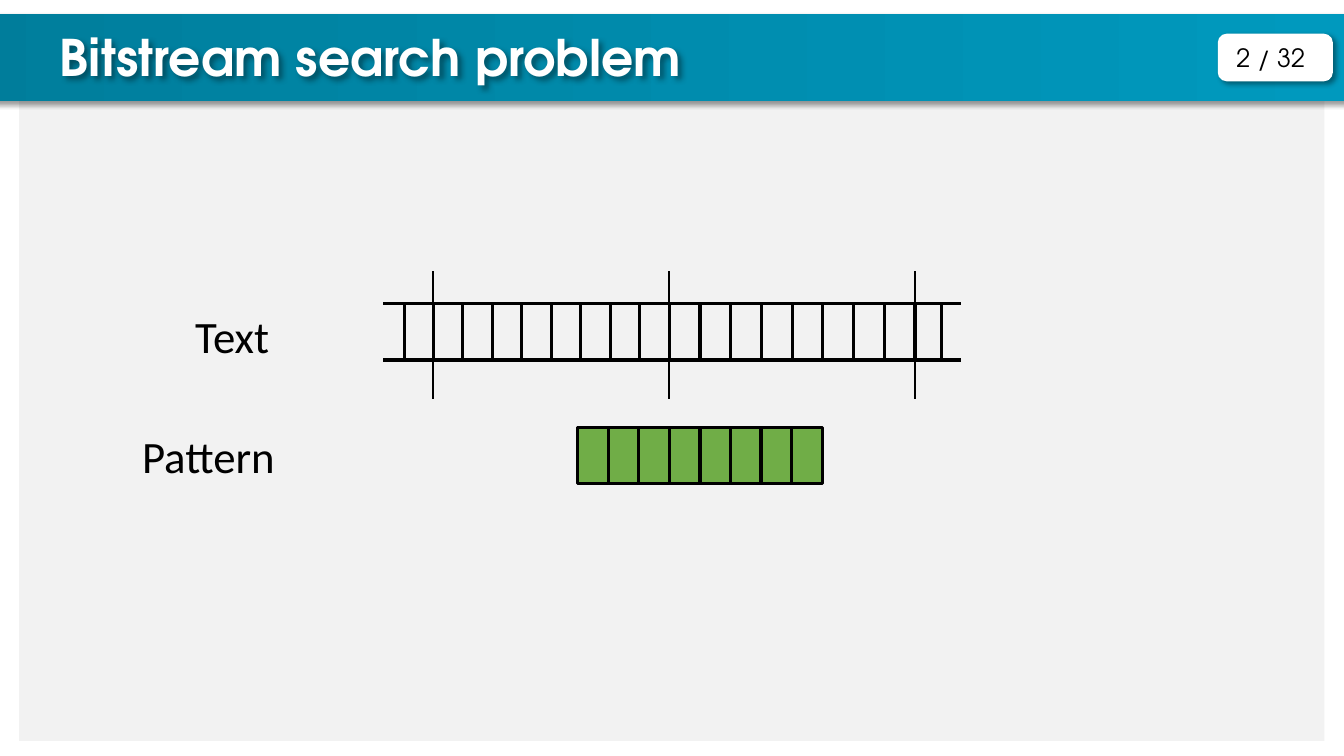
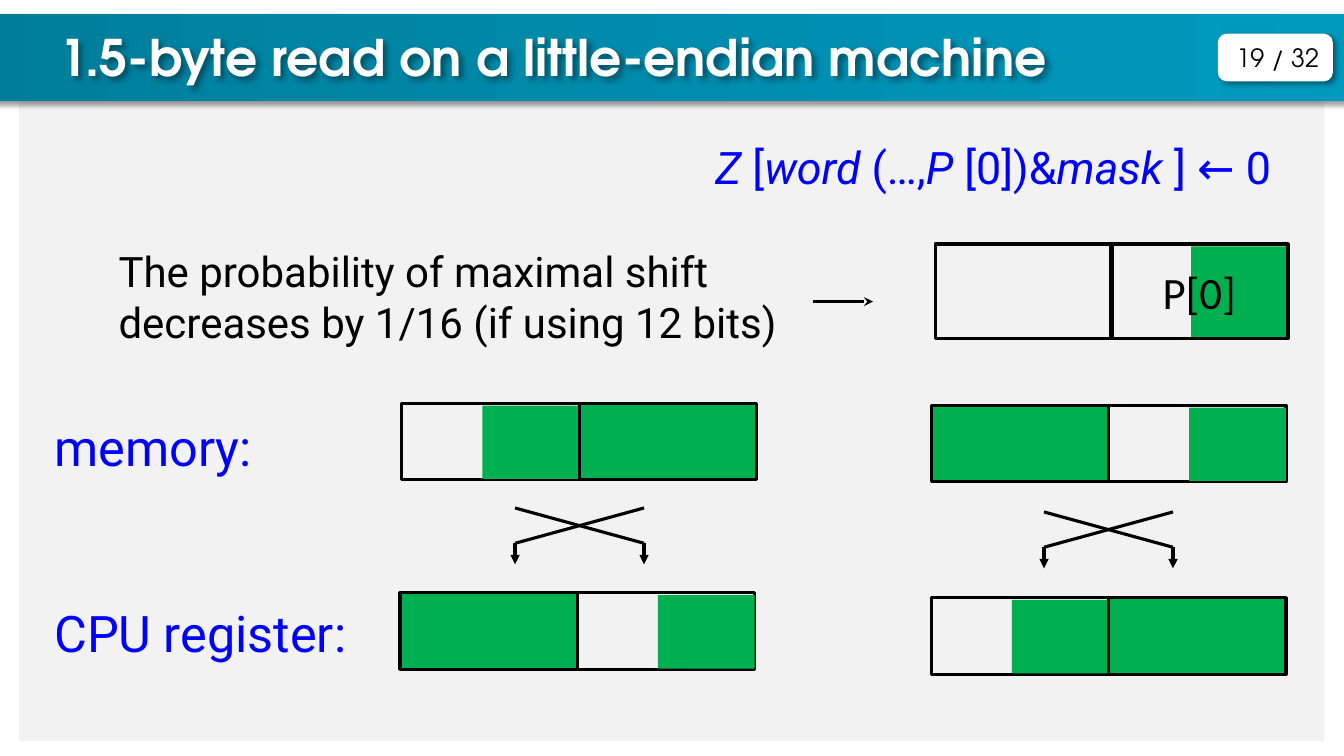
import pptx
import pptx.dml.color
import pptx.enum.dml
import pptx.enum.shapes
import pptx.enum.text
import pptx.oxml
import pptx.oxml.ns
import pptx.util
from lxml import etree

Cm = pptx.util.Cm
Pt = pptx.util.Pt
RGBColor = pptx.dml.color.RGBColor
RECTANGLE = pptx.enum.shapes.MSO_SHAPE.RECTANGLE
ROUNDED = pptx.enum.shapes.MSO_SHAPE.ROUNDED_RECTANGLE
STRAIGHT = pptx.enum.shapes.MSO_CONNECTOR.STRAIGHT
ALIGN = pptx.enum.text.PP_ALIGN
ANCHOR = pptx.enum.text.MSO_ANCHOR
qn = pptx.oxml.ns.qn

BLACK = RGBColor(0x00, 0x00, 0x00)
WHITE = RGBColor(0xFF, 0xFF, 0xFF)
PANEL = RGBColor(0xF2, 0xF2, 0xF2)
BAND_DARK = RGBColor(0x00, 0x7D, 0x9B)
BAND_LIGHT = RGBColor(0x00, 0x9B, 0xC0)
BLUE = RGBColor(0x00, 0x00, 0xFF)
PATTERN_GREEN = RGBColor(0x70, 0xAD, 0x47)
BYTE_GREEN = RGBColor(0x00, 0xB0, 0x50)

HEADING_FONT = "TeX Gyre Adventor"
BODY_FONT = "Roboto"
LABEL_FONT = "Calibri"

BYTE_WIDTH = 4.47
BYTE_HEIGHT = 1.93
NIBBLE_WIDTH = 2.44


class Deck:
    """Hold the presentation style and the slide being drawn."""

    def __init__(self):
        self.presentation = pptx.Presentation()
        self.presentation.slide_width = Cm(33.87)
        self.presentation.slide_height = Cm(19.05)
        self.layout = self.presentation.slide_layouts[5]
        self.slide = None

    def new_slide(self, title, page):
        """Start a slide with its title and page number."""
        self.slide = self.presentation.slides.add_slide(self.layout)
        if len(self.presentation.slides) == 1:
            self.furnish_layout()
        shape = self.slide.shapes.title
        shape.left, shape.top, shape.width, shape.height = Cm(1.25), Cm(0.53), Cm(30.5), Cm(1.8)
        self.set_text(shape, title, HEADING_FONT, 36, WHITE, bold=True)
        shape.text_frame.vertical_anchor = ANCHOR.TOP
        self.cast_shadow(shape)
        self.text(page, 30.91, 0.94, 3.15, 1.02, HEADING_FONT, 18, wrap=False)

    def furnish_layout(self):
        """Place the panel, the title band and the page badge on the layout."""
        for placeholder in list(self.layout.placeholders):
            if placeholder.placeholder_format.idx:
                placeholder.element.getparent().remove(placeholder.element)
        panel = self.box(0.48, 2.13, 32.9, 16.54, PANEL, None)
        band = self.box(-1.3, 0.36, 37.36, 2.18, BAND_DARK, None)
        band.fill.gradient()
        band.fill.gradient_angle = 0
        for stop, color in zip(band.fill.gradient_stops, (BAND_DARK, BAND_LIGHT)):
            stop.color.rgb = color
        badge = self.box(30.73, 0.89, 2.82, 1.12, WHITE, WHITE, ROUNDED)
        self.cast_shadow(band)
        self.cast_shadow(badge)
        for position, shape in enumerate((panel, band, badge), start=2):
            self.layout.shapes.element.insert(position, shape.element)

    def cast_shadow(self, shape):
        """Give a shape a soft shadow to the lower right."""
        shape.shadow.inherit = False
        effects = shape.element.spPr.find(qn("a:effectLst"))
        shadow = etree.SubElement(effects, qn("a:outerShdw"), blurRad=str(Pt(4)), dist=str(Pt(3)),
                                  dir="2700000", algn="tl", rotWithShape="0")
        color = etree.SubElement(shadow, qn("a:srgbClr"), val=str(BLACK))
        etree.SubElement(color, qn("a:alpha"), val="40000")

    def set_text(self, shape, content, font, size, color, bold=False, align=ALIGN.LEFT, wrap=True):
        """Fill a shape with one paragraph, given as text or (text, italic) runs."""
        frame = shape.text_frame
        frame.word_wrap = wrap
        frame.auto_size = pptx.enum.text.MSO_AUTO_SIZE.NONE
        paragraph = frame.paragraphs[0]
        paragraph.alignment = align
        paragraph.font.name = font
        paragraph.font.size = Pt(size)
        paragraph.font.bold = bold
        paragraph.font.color.rgb = color
        if isinstance(content, str):
            paragraph.add_run().text = content
            return
        for words, italic in content:
            run = paragraph.add_run()
            run.text = words
            run.font.italic = italic

    def text(self, content, left, top, width, height, font, size, color=BLACK, **options):
        """Add a text box."""
        shape = self.slide.shapes.add_textbox(Cm(left), Cm(top), Cm(width), Cm(height))
        self.set_text(shape, content, font, size, color, **options)

    def box(self, left, top, width, height, fill=None, line=BLACK, kind=RECTANGLE):
        """Add a flat shape, optionally filled and outlined."""
        shape = self.slide.shapes.add_shape(kind, Cm(left), Cm(top), Cm(width), Cm(height))
        shape.shadow.inherit = False
        if fill is None:
            shape.fill.background()
        else:
            shape.fill.solid()
            shape.fill.fore_color.rgb = fill
        if line is None:
            shape.line.fill.background()
        else:
            shape.line.color.rgb = line
            shape.line.width = Pt(2.25)
        return shape

    def line(self, x1, y1, x2, y2, head=None, width=2.25):
        """Add a straight line, with an arrowhead at its end if one is named."""
        connector = self.slide.shapes.add_connector(STRAIGHT, Cm(x1), Cm(y1), Cm(x2), Cm(y2))
        connector.line.color.rgb = BLACK
        connector.line.width = Pt(width)
        properties = connector.element.spPr
        if head:
            etree.SubElement(properties.find(qn("a:ln")), qn("a:tailEnd"), type=head)
        etree.SubElement(properties, qn("a:effectLst"))

    def cells(self, left, top, width, fill=None):
        """Add the eight bit cells of one byte."""
        for index in range(8):
            self.box(left + index * width, top, width, 1.42, fill)

    def word(self, left, top, half_index):
        """Add two bytes, the one at half_index only half filled."""
        for index in range(2):
            byte_left = left + index * BYTE_WIDTH
            if index == half_index:
                self.box(byte_left, top, BYTE_WIDTH, BYTE_HEIGHT)
                self.nibble(byte_left, top, BYTE_HEIGHT)
            else:
                self.box(byte_left, top, BYTE_WIDTH, BYTE_HEIGHT, BYTE_GREEN)

    def nibble(self, byte_left, top, byte_height):
        """Fill the right part of a byte."""
        self.box(byte_left + BYTE_WIDTH - NIBBLE_WIDTH, top + 0.06, NIBBLE_WIDTH,
                 byte_height - 0.08, BYTE_GREEN, None)

    def swap(self, left, top):
        """Add two crossing lines that end in arrows pointing down."""
        right, bend = left + 3.25, top + 0.89
        for start, end in ((right, left), (left, right)):
            self.line(start, top, end, bend)
            self.line(end, bend, end, bend + 0.53, "triangle")


def search_problem(deck):
    """Draw a bit pattern that crosses the byte borders of a text."""
    deck.new_slide("Bitstream search problem", "2 / 32")
    top, bottom = 7.65, 9.07
    borders = (10.92, 16.87, 23.06)
    for left, right in zip(borders, borders[1:]):
        deck.cells(left, top, (right - left) / 8)
    for border in borders:
        deck.line(border, 6.83, border, 10.06, width=1.5)
    for rail in (top, bottom):
        deck.line(9.66, rail, 24.21, rail)
    for edge in (10.19, 23.72):
        deck.line(edge, top, edge, bottom)
    deck.cells(14.56, 10.77, 0.77, PATTERN_GREEN)
    deck.text("Text", 4.67, 7.65, 2.39, 1.63, LABEL_FONT, 32, wrap=False)
    deck.text("Pattern", 3.33, 10.67, 4.34, 1.63, LABEL_FONT, 32)


def little_endian_read(deck):
    """Draw how bytes swap between memory and the register."""
    deck.new_slide("1.5-byte read on a little-endian machine", "19 / 32")
    formula = (("Z ", True), ("[", False), ("word ", True), ("(…,", False), ("P ", True),
               ("[0])&", False), ("mask ", True), ("] ← 0", False))
    deck.text(formula, 16.56, 3.4, 16.94, 2, BODY_FONT, 32, BLUE, align=ALIGN.CENTER)
    deck.text("The probability of maximal shift decreases by 1/16 (if using 12 bits)",
              2.74, 6.07, 17.2, 2.82, BODY_FONT, 30)
    deck.line(20.5, 7.6, 22, 7.6, "stealth")
    deck.box(23.57, 6.15, BYTE_WIDTH, 2.39)
    deck.nibble(27.99, 6.15, 2.39)
    first_byte = deck.box(27.99, 6.15, BYTE_WIDTH, 2.39)
    first_byte.text_frame.vertical_anchor = ANCHOR.MIDDLE
    deck.set_text(first_byte, "P[0]", LABEL_FONT, 32, BLACK, align=ALIGN.CENTER)
    for label, top in (("memory:", 10.36), ("CPU register:", 15.06)):
        deck.text(label, 1.12, top, 8.08, 1.8, BODY_FONT, 36, BLUE)
    for left, top, half_index in ((10.13, 10.16, 0), (23.47, 10.21, 1),
                                  (10.08, 14.94, 1), (23.47, 15.06, 0)):
        deck.word(left, top, half_index)
    for left, top in ((12.98, 12.8), (26.31, 12.9)):
        deck.swap(left, top)


def main():
    """Build and save the presentation."""
    deck = Deck()
    search_problem(deck)
    little_endian_read(deck)
    deck.presentation.save("out.pptx")


if __name__ == "__main__":
    main()
